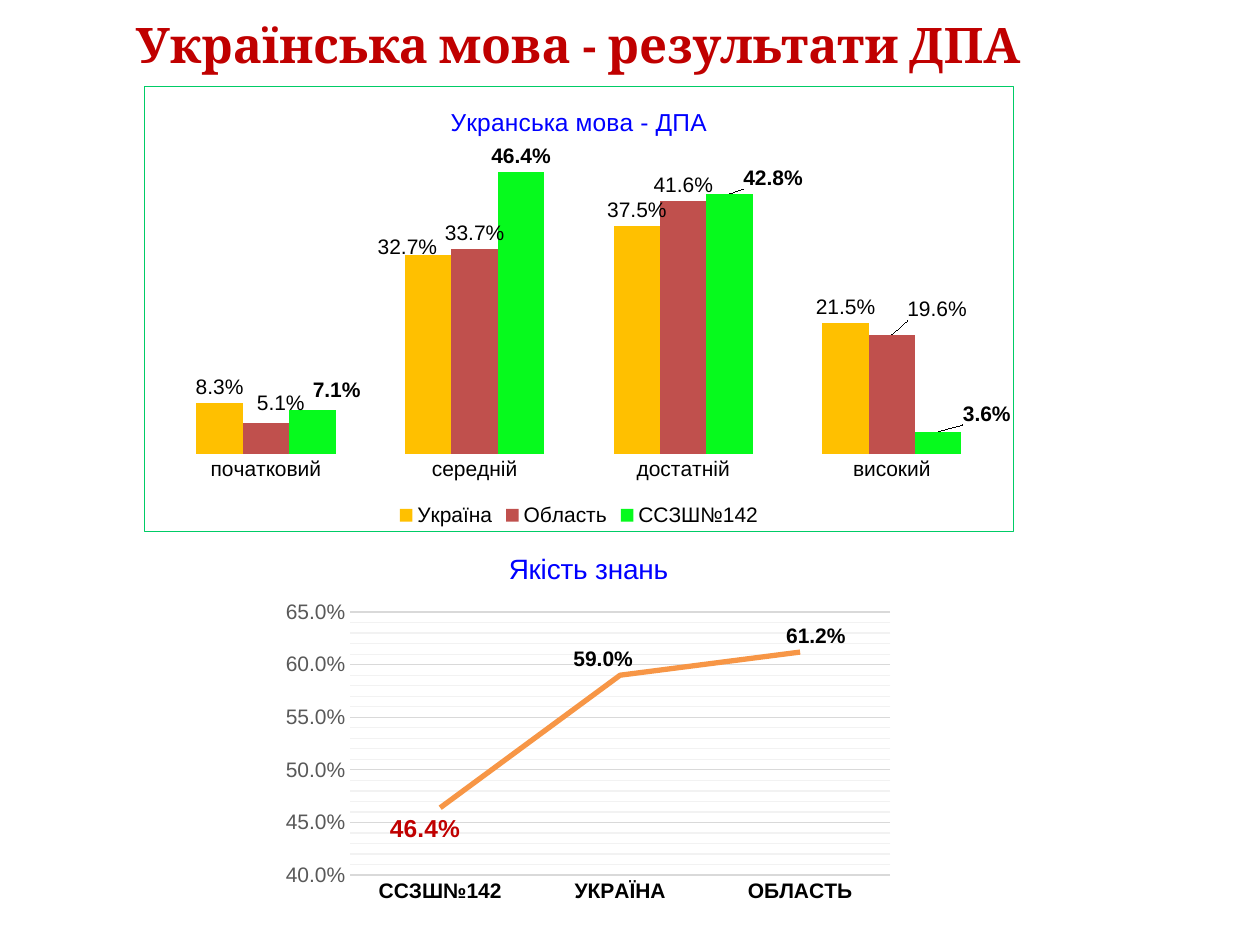
from dataclasses import dataclass, field

from lxml import etree
from pptx import Presentation, util as u
from pptx.chart import data as chart_data
from pptx.dml import color
from pptx.enum import chart as kinds, text
from pptx.oxml import ns, parse_xml

COLORS = {
    "heading": "C00000", "title": "0000FF", "ink": "000000", "axis": "595959",
    "ukraine": "FFC000", "region": "C0504D", "school": "06FA1D",
    "quality": "F79646", "border": "00CC66", "panel": "FFFFFF",
    "grid": "D9D9D9", "minor": "F2F2F2",
}
PAGE_WIDTH, PAGE_HEIGHT = u.Inches(10), u.Inches(7.5)
PERCENT = "0.0%"
LABEL = kinds.XL_LABEL_POSITION


@dataclass
class Area:
    """A rectangle in shares of its parent."""
    left: float
    top: float
    width: float
    height: float

    def on_page(self) -> tuple:
        return tuple(u.Emu(round(share * size)) for share, size in zip(
            (self.left, self.top, self.width, self.height),
            (PAGE_WIDTH, PAGE_HEIGHT) * 2))


@dataclass
class Series:
    """Values with a colour and label shifts in shares of the chart."""
    name: str
    values: tuple
    color: str
    bold: bool = False
    shifts: dict = field(default_factory=dict)


@dataclass
class ChartSpec:
    """Everything that differs between the charts."""
    kind: kinds.XL_CHART_TYPE
    area: Area
    plot: Area
    title: str
    title_size: int
    categories: tuple
    series: tuple
    label_position: LABEL
    minimum: float
    maximum: float


RESULTS = ChartSpec(
    kinds.XL_CHART_TYPE.COLUMN_CLUSTERED,
    Area(0.114, 0.091, 0.691, 0.472), Area(0.02, 0.143, 0.96, 0.682),
    "Укранська мова - ДПА", 14,
    ("початковий", "середній", "достатній", "високий"),
    (Series("Україна", (0.083, 0.327, 0.375, 0.215), "ukraine",
            shifts={1: (-0.024, 0.018)}),
     Series("Область", (0.051, 0.337, 0.416, 0.196), "region",
            shifts={0: (0.017, -0.007), 3: (0.052, -0.02)}),
     Series("ССЗШ№142", (0.071, 0.464, 0.428, 0.036), "school", True,
            {0: (0.028, -0.009), 2: (0.05, 0), 3: (0.056, -0.004)})),
    LABEL.OUTSIDE_END, 0, 0.5)

QUALITY = ChartSpec(
    kinds.XL_CHART_TYPE.LINE,
    Area(0.217, 0.563, 0.5, 0.4), Area(0.122, 0.212, 0.857, 0.696),
    "Якість знань", 16, ("ССЗШ№142", "УКРАЇНА", "ОБЛАСТЬ"),
    (Series("Series 1", (0.464, 0.59, 0.612), "quality", True,
            {0: (-0.024, 0.056), 1: (-0.027, -0.042), 2: (0.025, -0.042)}),),
    LABEL.CENTER, 0.4, 0.65)


def rgb(name: str) -> color.RGBColor:
    return color.RGBColor.from_string(COLORS[name])


def set_font(font, size: float, ink: str = "ink", bold: bool = False,
             face: str = "Arial") -> None:
    font.name, font.size, font.bold = face, u.Pt(size), bold
    font.color.rgb = rgb(ink)


def set_line(line, ink: str, width: float = 0.75) -> None:
    line.color.rgb, line.width = rgb(ink), u.Pt(width)


def outline(ink: str, fill: str = "") -> etree.ElementBase:
    return parse_xml(
        f'<c:spPr {ns.nsdecls("c", "a")}>{fill}<a:ln w="{u.Pt(0.75)}">'
        f'<a:solidFill><a:srgbClr val="{COLORS[ink]}"/></a:solidFill>'
        "</a:ln></c:spPr>")


def manual_layout(**settings) -> etree.ElementBase:
    rows = "".join(f'<c:{key} val="{value}"/>' for key, value in settings.items())
    return parse_xml(f'<c:layout {ns.nsdecls("c")}><c:manualLayout>{rows}'
                     "</c:manualLayout></c:layout>")


def place_plot(chart, plot: Area) -> None:
    area = chart._chartSpace.chart.plotArea
    for old in area.findall(ns.qn("c:layout")):
        area.remove(old)
    area.insert(0, manual_layout(
        layoutTarget="inner", xMode="edge", yMode="edge",
        x=plot.left, y=plot.top, w=plot.width, h=plot.height))


def label_series(series, spec: Series, position: LABEL) -> None:
    labels = series.data_labels
    labels.show_value, labels.position = True, position
    labels.number_format, labels.number_format_is_linked = PERCENT, False
    set_font(labels.font, 12, bold=spec.bold)
    for index in spec.shifts:
        label = series.points[index].data_label
        set_font(label.font, 12, bold=spec.bold)
        label.position = position
    for mark in labels._element.findall(ns.qn("c:dLbl")):
        x, y = spec.shifts[int(mark.find(ns.qn("c:idx")).get("val"))]
        mark.insert(1, manual_layout(x=x, y=y))


def draw_chart(page, spec: ChartSpec):
    source = chart_data.CategoryChartData(number_format=PERCENT)
    source.categories = spec.categories
    for item in spec.series:
        source.add_series(item.name, item.values)
    chart = page.shapes.add_chart(spec.kind, *spec.area.on_page(), source).chart
    set_font(chart.font, 10)
    chart.has_legend, chart.has_title = False, True
    frame = chart.chart_title.text_frame
    frame.text = spec.title
    set_font(frame.paragraphs[0].font, spec.title_size, "title")
    chart.chart_title.include_in_layout = False
    place_plot(chart, spec.plot)
    chart.plots[0].vary_by_categories = False
    for series, item in zip(chart.plots[0].series, spec.series):
        label_series(series, item, spec.label_position)
    for axis in (chart.category_axis, chart.value_axis):
        axis.major_tick_mark = axis.minor_tick_mark = kinds.XL_TICK_MARK.NONE
        axis.format.line.fill.background()
        set_font(axis.tick_labels.font, 12)
    scale = chart.value_axis
    scale.minimum_scale, scale.maximum_scale = spec.minimum, spec.maximum
    scale.tick_labels.number_format = PERCENT
    scale.tick_labels.number_format_is_linked = False
    return chart


def draw_results(page) -> None:
    chart = draw_chart(page, RESULTS)
    plot = chart.plots[0]
    plot.gap_width, plot.overlap = 150, 0
    for series, item in zip(plot.series, RESULTS.series):
        series.format.fill.solid()
        series.format.fill.fore_color.rgb = rgb(item.color)
    chart.value_axis.has_major_gridlines = False
    chart.value_axis.visible = False
    chart.has_legend = True
    chart.legend.position = kinds.XL_LEGEND_POSITION.BOTTOM
    chart.legend.include_in_layout = False
    set_font(chart.legend.font, 12)
    panel = (f'<a:solidFill><a:srgbClr val="{COLORS["panel"]}">'
             '<a:alpha val="76000"/></a:srgbClr></a:solidFill>')
    chart._chartSpace.chart.addnext(outline("border", panel))


def draw_quality(page) -> None:
    chart = draw_chart(page, QUALITY)
    series = chart.plots[0].series[0]
    series.smooth = False
    set_line(series.format.line, "quality", 3)
    set_font(series.points[0].data_label.font, 14, "heading", True)
    set_font(chart.category_axis.tick_labels.font, 12, bold=True)
    set_line(chart.category_axis.format.line, "grid")
    scale = chart.value_axis
    set_font(scale.tick_labels.font, 12, "axis")
    scale.major_unit, scale.minor_unit = 0.05, 0.01
    scale.has_major_gridlines = scale.has_minor_gridlines = True
    set_line(scale.major_gridlines.format.line, "grid")
    scale._element.find(ns.qn("c:minorGridlines")).append(outline("minor"))


def draw_heading(page) -> None:
    box = page.shapes.add_textbox(*Area(0.098, -0.004, 0.85, 0.1).on_page())
    frame = box.text_frame
    frame.word_wrap, frame.vertical_anchor = True, text.MSO_ANCHOR.MIDDLE
    para = frame.paragraphs[0]
    para.text = "Українська мова - результати ДПА"
    set_font(para.font, 28, "heading", True, "Cambria")


def main() -> None:
    """Build the slide of exam results and save it."""
    deck = Presentation()
    deck.slide_width, deck.slide_height = PAGE_WIDTH, PAGE_HEIGHT
    page = deck.slides.add_slide(deck.slide_layouts[6])
    draw_heading(page)
    draw_results(page)
    draw_quality(page)
    deck.save("out.pptx")


if __name__ == "__main__":
    main()
